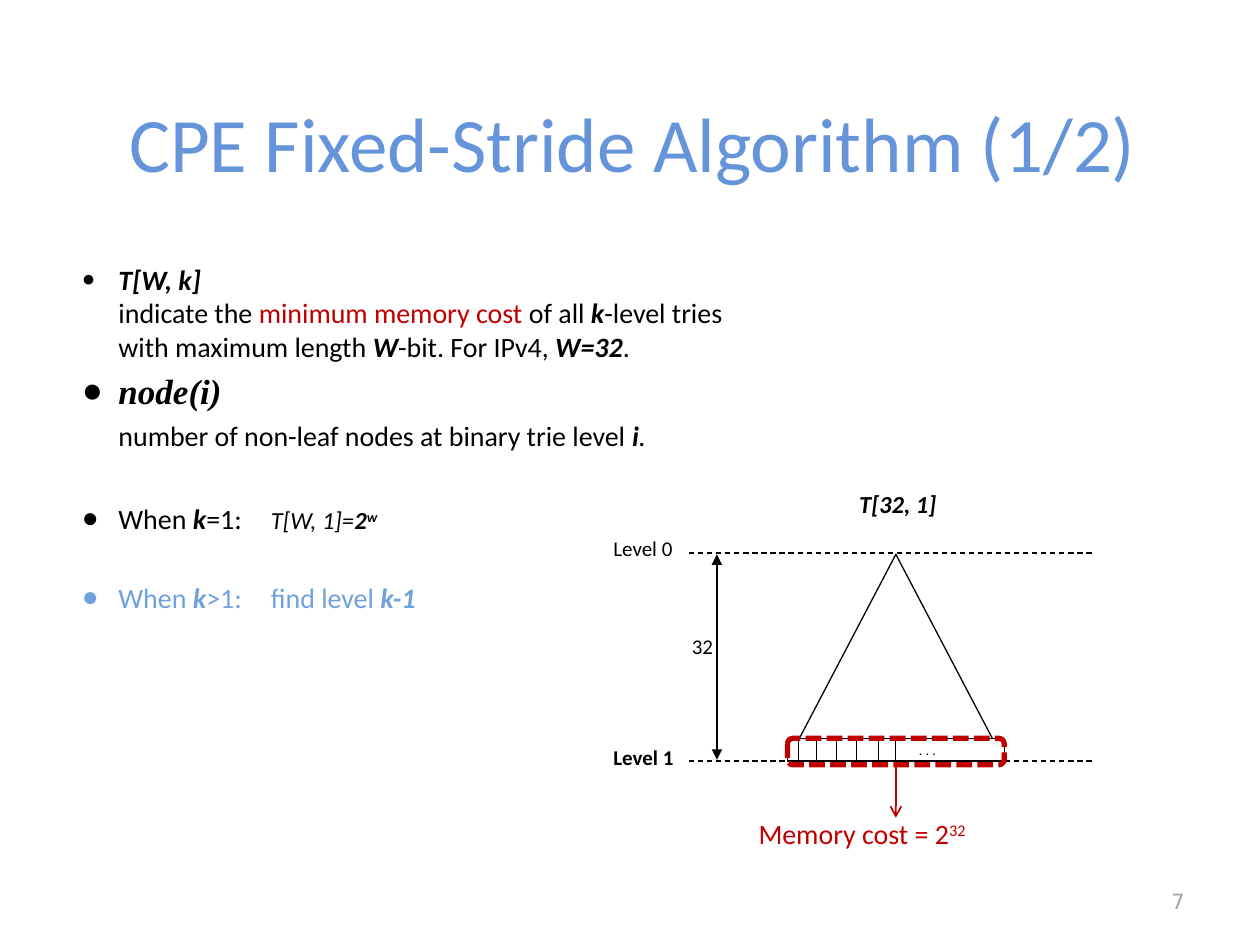
import pptx
import pptx.util
import pptx.dml.color
import pptx.enum.dml
import pptx.enum.shapes
import pptx.enum.text
import pptx.oxml.ns
import lxml.etree

Inches, Pt = pptx.util.Inches, pptx.util.Pt
RGB = pptx.dml.color.RGBColor.from_string
SHAPE = pptx.enum.shapes.MSO_SHAPE
ALIGN = pptx.enum.text.PP_ALIGN
ANCHOR = pptx.enum.text.MSO_ANCHOR
DASH = pptx.enum.dml.MSO_LINE
qn = pptx.oxml.ns.qn
COLORS = {"title": "6594DA", "soft": "71A1DC", "text": "000000",
          "red": "C00000", "page": "A7A399", "white": "FFFFFF"}


def write(par, parts, size, color="text", face="Calibri"):
    """Add (text, marks) runs; marks: b bold, i italic, r red, s superscript."""
    par.font.size = Pt(size)
    par.font.name = face
    par.font.color.rgb = RGB(COLORS[color])
    shared = set.intersection(*(set(marks) for _, marks in parts))
    par.font.bold = "b" in shared
    par.font.italic = "i" in shared
    for text, marks in parts:
        for n, line in enumerate(text.split("\n")):
            if n:
                par.add_line_break()
            if not line:
                continue
            run = par.add_run()
            run.text = line
            own = set(marks) - shared
            if "b" in own:
                run.font.bold = True
            if "i" in own:
                run.font.italic = True
            if "r" in own:
                run.font.color.rgb = RGB(COLORS["red"])
            if "s" in own:
                run._r.get_or_add_rPr().set("baseline", "30000")


def style(shape, color="text", width=0.75, dash=None, fill=None, ends=()):
    """Set the outline, fill and arrowheads, and drop the shadow."""
    shape.line.color.rgb = RGB(COLORS[color])
    shape.line.width = Pt(width)
    if dash:
        shape.line.dash_style = dash
    for tag, kind in ends:
        lxml.etree.SubElement(shape.line._get_or_add_ln(), qn(tag), type=kind)
    if hasattr(shape, "begin_x"):
        lxml.etree.SubElement(shape._element.spPr, qn("a:effectLst"))
        return
    shape.shadow.inherit = False
    if fill:
        shape.fill.solid()
        shape.fill.fore_color.rgb = RGB(COLORS[fill])
    else:
        shape.fill.background()


prs = pptx.Presentation()
prs.slide_width, prs.slide_height = Inches(10), Inches(7.5)
slide = prs.slides.add_slide(prs.slide_layouts[1])
shapes = slide.shapes

# Title and list
title, body = slide.placeholders
for holder, top, high in ((title, 0.55, 1.15), (body, 2.03, 4.58)):
    holder.left, holder.top = Inches(0.55), Inches(top)
    holder.width, holder.height = Inches(8.95), Inches(high)
    holder.text_frame.auto_size = pptx.enum.text.MSO_AUTO_SIZE.NONE
title.text_frame.vertical_anchor = ANCHOR.MIDDLE
head = title.text_frame.paragraphs[0]
head.alignment = ALIGN.CENTER
write(head, [("CPE Fixed-Stride Algorithm (1/2)", "")], 44, "title")

# Bullet size in percent (0 for none), space before, size, color, face, runs
items = [
    (80, 0, 16, "text", "Calibri", [
        ("T[W, k] \n", "bi"), ("indicate the ", ""),
        ("minimum memory cost ", "r"), ("of all ", ""), ("k", "bi"),
        ("-level tries \nwith maximum length ", ""), ("W", "bi"),
        ("-bit. For IPv4, ", ""), ("W=32", "bi"), (".", "")]),
    (100, 4, 20, "text", "Times New Roman", [("node(i)", "bi")]),
    (0, 4, 16, "text", "Calibri", [
        ("number of non-leaf nodes at binary trie level ", ""),
        ("i", "bi"), (".", "i")]),
    (100, 28, 16, "text", "Calibri", [
        ("When ", ""), ("k", "bi"), ("=1:", ""), ("\tT[W, 1]=", "i"),
        ("2", "bi"), ("w", "bis")]),
    (100, 26, 16, "soft", "Calibri", [
        ("When ", ""), ("k", "bi"), (">1:\tfind level ", ""),
        ("k-1", "bi")]),
]
frame = body.text_frame
for n, (mark, gap, size, color, face, parts) in enumerate(items):
    par = frame.paragraphs[0] if n == 0 else frame.add_paragraph()
    props = par._p.get_or_add_pPr()
    props.set("marL", str(Inches(0.29)))
    props.set("indent", str(Inches(-0.29 if mark else 0)))
    if mark:
        lxml.etree.SubElement(props, qn("a:buSzPct"), val=str(mark * 1000))
        lxml.etree.SubElement(props, qn("a:buChar"), char="●")
    else:
        lxml.etree.SubElement(props, qn("a:buNone"))
    par.space_before = Pt(gap)
    write(par, parts, size, color, face)
for run in frame.paragraphs[3].runs[3:]:
    run.font.size = Pt(14)

# Trie and its level lines
trie = shapes.add_shape(SHAPE.ISOSCELES_TRIANGLE, Inches(6.25), Inches(4.4),
                        Inches(1.72), Inches(1.64))
style(trie)
both = [("a:headEnd", "triangle"), ("a:tailEnd", "triangle")]
for x1, y1, x2, y2, dash, ends in ((5.69, 6.03, 5.69, 4.4, None, both),
                                   (5.47, 4.39, 8.67, 4.39, DASH.DASH, ()),
                                   (5.47, 6.04, 8.67, 6.04, DASH.DASH, ())):
    line = shapes.add_connector(pptx.enum.shapes.MSO_CONNECTOR.STRAIGHT,
                                Inches(x1), Inches(y1), Inches(x2), Inches(y2))
    style(line, dash=dash, ends=ends)

# Row of memory cells
for left, wide in ((6.25, 1.72), (6.34, 0.14), (6.64, 0.16), (6.97, 0.14)):
    cell = shapes.add_shape(SHAPE.RECTANGLE, Inches(left), Inches(5.86),
                            Inches(wide), Inches(0.18))
    style(cell, fill="white")
    if wide > 1:
        dots = cell.text_frame
        dots.margin_left = Inches(0.5)
        dots.margin_top = dots.margin_right = dots.margin_bottom = 0
        dots.vertical_anchor = ANCHOR.MIDDLE
        dots.paragraphs[0].alignment = ALIGN.CENTER
        write(dots.paragraphs[0], [(". . .", "")], 8)

# Red frame and the arrow to the cost
ring = shapes.add_shape(SHAPE.ROUNDED_RECTANGLE, Inches(6.25), Inches(5.86),
                        Inches(1.72), Inches(0.21))
ring.adjustments[0] = 0.2
style(ring, "red", 3, DASH.SQUARE_DOT)
arrow = shapes.add_connector(pptx.enum.shapes.MSO_CONNECTOR.STRAIGHT,
                             Inches(7.11), Inches(6.07),
                             Inches(7.11), Inches(6.49))
arrow.begin_connect(ring, 2)
style(arrow, "red", 1, ends=[("a:tailEnd", "arrow")])

# Labels: place, margins, size, color, face, runs
pad = (0.1, 0.05, 0.1, 0.05)
labels = [
    (4.77, 4.2, 0.67, 0.29, pad, 12, "text", "Calibri", [("Level 0", "")]),
    (4.77, 5.86, 0.7, 0.3, pad, 12, "text", "Calibri", [("Level 1", "b")]),
    (6.02, 6.48, 2.19, 0.31, (0, 0, 0, 0), 16, "red", "Calibri",
     [("Memory cost = 2", ""), ("32", "s")]),
    (5.49, 5.03, 0.28, 0.31, (0, 0, 0.1, 0.05), 12, "text", "Calibri",
     [("32", "")]),
    (6.72, 3.83, 1.02, 0.34, pad, 14, "text", "Calibri", [("T[32, 1]", "bi")]),
    (7.17, 6.95, 2.33, 0.4, pad, 12, "page", "DejaVu Sans", [("7", "")]),
]
for left, top, wide, high, edges, size, color, face, parts in labels:
    box = shapes.add_textbox(Inches(left), Inches(top),
                             Inches(wide), Inches(high)).text_frame
    (box.margin_left, box.margin_top,
     box.margin_right, box.margin_bottom) = map(Inches, edges)
    box.word_wrap = color != "text"
    if color == "page":
        box.vertical_anchor = ANCHOR.MIDDLE
        box.paragraphs[0].alignment = ALIGN.RIGHT
    write(box.paragraphs[0], parts, size, color, face)

prs.save("out.pptx")
